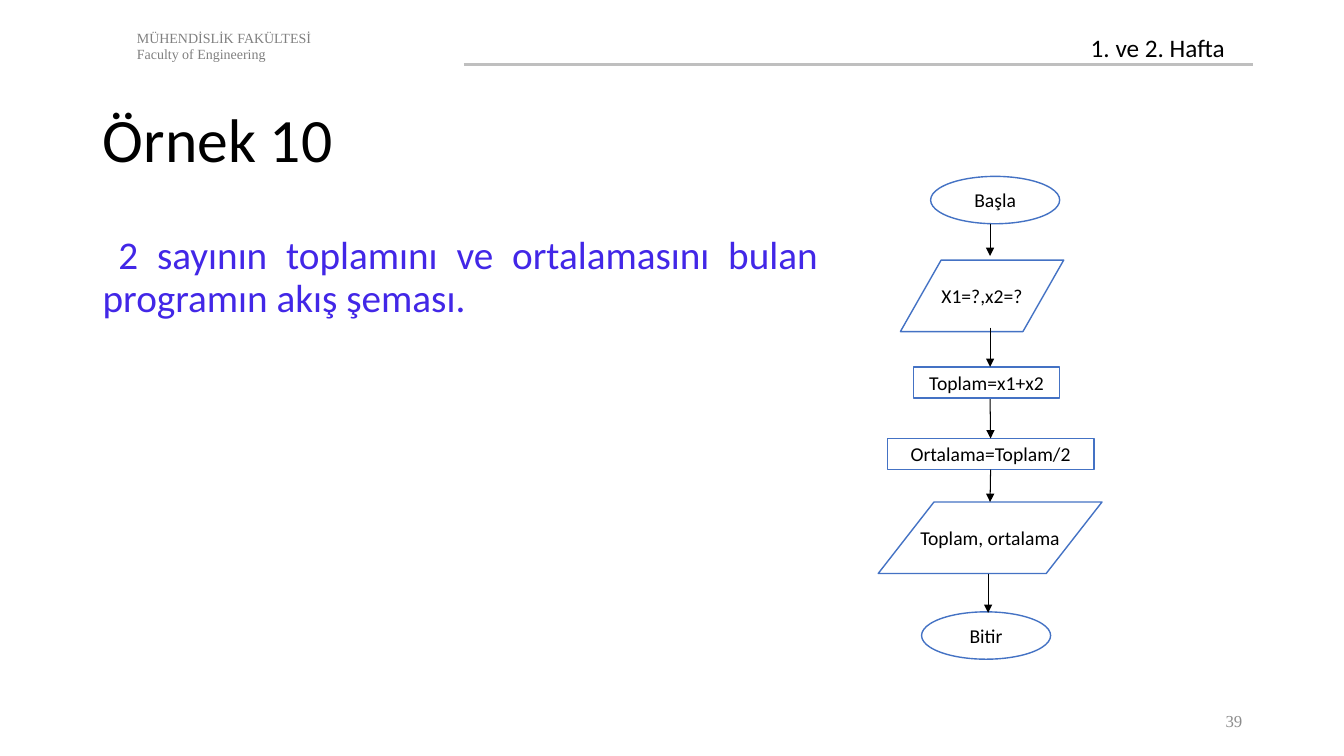
from lxml.etree import SubElement
from pptx import Presentation
from pptx.dml.color import RGBColor
from pptx.enum.shapes import MSO_CONNECTOR, MSO_SHAPE
from pptx.enum.text import MSO_ANCHOR, PP_ALIGN
from pptx.oxml.ns import qn
from pptx.util import Inches, Pt


def write(para, text, size, color="000000", face="Calibri"):
    run = para.add_run()
    run.text = text
    run.font.size = Pt(size)
    run.font.name = face
    run.font.color.rgb = RGBColor.from_string(color)


def draw_line(start, end, color, width):
    line = slide.shapes.add_connector(
        MSO_CONNECTOR.STRAIGHT, *[Inches(v) for v in start + end])
    line.line.color.rgb = RGBColor.from_string(color)
    line.line.width = Pt(width)
    SubElement(line._element.spPr, qn("a:effectLst"))
    return line


deck = Presentation()
deck.slide_width, deck.slide_height = Inches(13.33), Inches(7.5)
slide = deck.slides.add_slide(deck.slide_layouts[5])

# Title
title = slide.shapes.title
title.left, title.top = Inches(0.92), Inches(0.98)
title.width, title.height = Inches(11.5), Inches(0.87)
title.text_frame.vertical_anchor = MSO_ANCHOR.MIDDLE
para = title.text_frame.paragraphs[0]
para.alignment = PP_ALIGN.LEFT
para.line_spacing = 0.9
write(para, "Örnek 10", 44)

# Header, task and page number
draw_line((4.6, 0.64), (12.43, 0.64), "BFBFBF", 1.5)
serif = "Times New Roman"
left, right, full = PP_ALIGN.LEFT, PP_ALIGN.RIGHT, PP_ALIGN.JUSTIFY
notes = [
    ((1.26, 0.24, 6.67, 0.44), left, 1,
     [[("MÜHENDİSLİK FAKÜLTESİ", 10, "808080", serif)],
      [("Faculty of Engineering", 10, "808080", serif)]]),
    ((10.72, 0.27, 1.7, 0.4), left, 1, [[("1. ve 2. Hafta", 18)]]),
    ((0.92, 2.29, 7.29, 0.95), full, 0.9,
     [[(" ", 18),
       ("2 sayının toplamını ve ortalamasını bulan programın akış şeması.",
        28, "4227E7")]]),
    ((11.97, 6.95, 0.45, 0.4), right, 1, [[("39", 12, "8C8C8C", serif)]]),
]
for place, align, space, lines in notes:
    frame = slide.shapes.add_textbox(*[Inches(v) for v in place]).text_frame
    frame.word_wrap = True
    if align == right:
        frame.vertical_anchor = MSO_ANCHOR.MIDDLE
    for i, runs in enumerate(lines):
        para = frame.add_paragraph() if i else frame.paragraphs[0]
        para.alignment = align
        para.line_spacing = space
        for run in runs:
            write(para, *run)

# Flowchart steps
oval, box, slant = MSO_SHAPE.OVAL, MSO_SHAPE.RECTANGLE, MSO_SHAPE.PARALLELOGRAM
steps = [
    ("Başla", oval, (9.23, 1.75, 1.28, 0.47), None),
    ("X1=?,x2=?", slant, (8.93, 2.58, 1.62, 0.71), 0.57),
    ("Toplam=x1+x2", box, (9.06, 3.64, 1.45, 0.31), None),
    ("Ortalama=Toplam/2", box, (8.8, 4.35, 2.05, 0.31), None),
    ("Toplam, ortalama", slant, (8.71, 4.98, 2.22, 0.71), 0.78),
    ("Bitir", oval, (9.14, 6.07, 1.28, 0.47), None),
]
nodes = {}
for text, kind, place, skew in steps:
    node = slide.shapes.add_shape(kind, *[Inches(v) for v in place])
    node.shadow.inherit = False
    node.fill.solid()
    node.fill.fore_color.rgb = RGBColor.from_string("FFFFFF")
    node.line.color.rgb = RGBColor.from_string("4472C4")
    node.line.width = Pt(1)
    if skew:
        node.adjustments[0] = skew
    frame = node.text_frame
    frame.word_wrap = False
    frame.vertical_anchor = MSO_ANCHOR.MIDDLE
    frame.paragraphs[0].alignment = PP_ALIGN.CENTER
    write(frame.paragraphs[0], text, 14)
    nodes[text] = node

# Flowchart arrows
arrows = []
for x, top, end in [(9.82, 2.22, 2.54), (9.82, 3.25, 3.64), (9.82, 3.96, 4.35),
                    (9.82, 4.66, 4.98), (9.8, 5.69, 6.08)]:
    arrow = draw_line((x, top), (x, end), "000000", 0.75)
    SubElement(arrow.line._get_or_add_ln(), qn("a:tailEnd"), type="triangle")
    arrows.append(arrow)
mean = nodes["Ortalama=Toplam/2"]
arrows[2].end_connect(mean, 0)
arrows[3].begin_connect(mean, 2)

deck.save("out.pptx")
